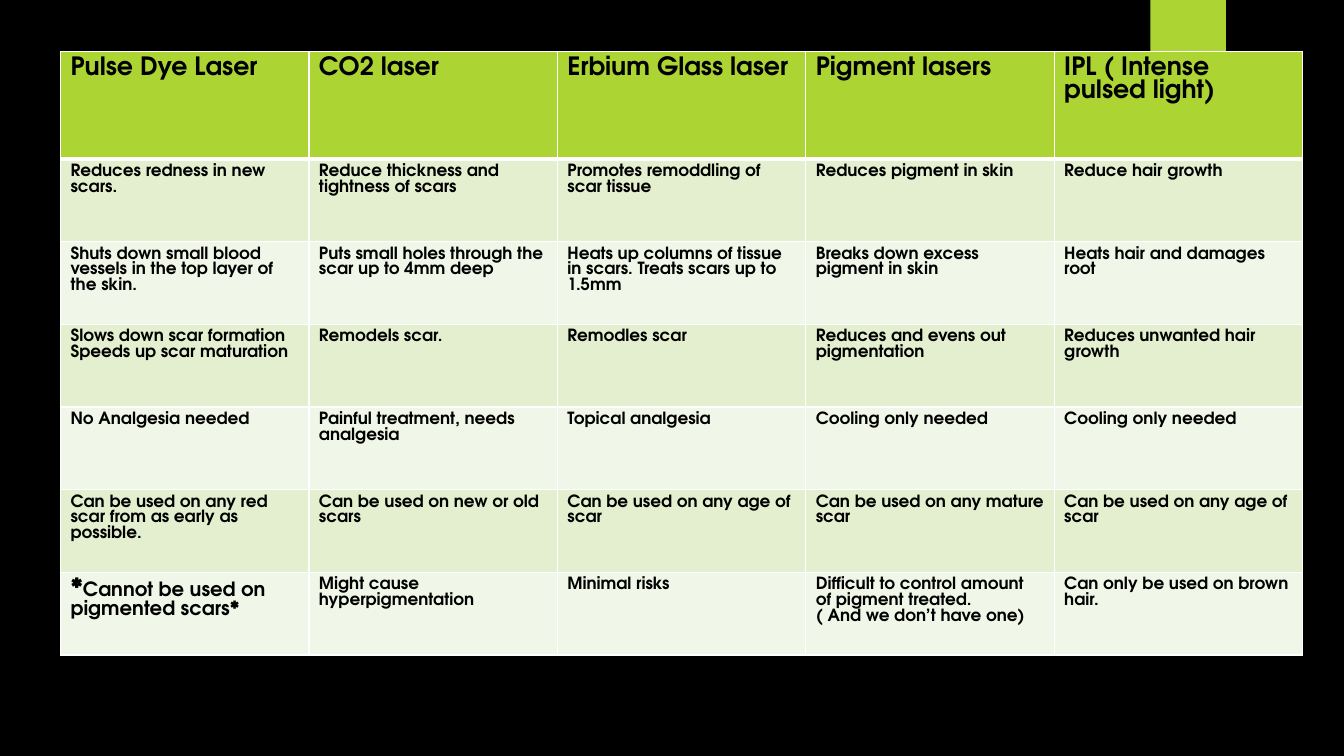
from lxml.etree import SubElement
from pptx import Presentation
from pptx.dml.color import RGBColor
from pptx.enum.shapes import MSO_SHAPE
from pptx.oxml.ns import qn
from pptx.util import Inches, Pt

BLACK = RGBColor(0x00, 0x00, 0x00)
WHITE = RGBColor(0xFF, 0xFF, 0xFF)
LIME = RGBColor(0xAC, 0xD4, 0x33)
BAND_DARK = RGBColor(0xE3, 0xEF, 0xCE)
BAND_LIGHT = RGBColor(0xF1, 0xF7, 0xE8)
FONT = "TeX Gyre Adventor"

LASERS = [
    ["Pulse Dye Laser", "CO2 laser", "Erbium Glass laser", "Pigment lasers",
     "IPL ( Intense pulsed light)"],
    ["Reduces redness in new scars.", "Reduce thickness and tightness of scars",
     "Promotes remoddling of scar tissue", "Reduces pigment in skin",
     "Reduce hair growth"],
    ["Shuts down small blood vessels in the top layer of the skin.",
     "Puts small holes through the scar up to 4mm deep",
     "Heats up columns of tissue in scars. Treats scars up to 1.5mm",
     "Breaks down excess pigment in skin", "Heats hair and damages root"],
    ["Slows down scar formation\nSpeeds up scar maturation", "Remodels scar.",
     "Remodles scar", "Reduces and evens out pigmentation",
     "Reduces unwanted hair growth"],
    ["No Analgesia needed", "Painful treatment, needs analgesia",
     "Topical analgesia", "Cooling only needed", "Cooling only needed"],
    ["Can be used on any red scar from as early as possible.",
     "Can be used on new or old scars", "Can be used on any age of scar",
     "Can be used on any mature scar", "Can be used on any age of scar"],
    ["*", "Might cause hyperpigmentation", "Minimal risks",
     "Difficult to control amount of pigment treated.\n( And we don’t have one)",
     "Can only be used on brown hair."],
]


def add_borders(cell, widths):
    properties = cell._tc.get_or_add_tcPr()
    for position, (side, width) in enumerate(widths.items()):
        line = properties.makeelement(qn(f"a:{side}"), {"w": str(Pt(width))})
        fill = SubElement(line, qn("a:solidFill"))
        SubElement(fill, qn("a:srgbClr"), val=str(WHITE))
        properties.insert(position, line)


presentation = Presentation()
presentation.slide_width = Inches(13.33)
presentation.slide_height = Inches(7.5)
slide = presentation.slides.add_slide(presentation.slide_layouts[6])
slide.background.fill.solid()
slide.background.fill.fore_color.rgb = BLACK

tab = slide.shapes.add_shape(
    MSO_SHAPE.RECTANGLE, Inches(11.41), Inches(0), Inches(0.75), Inches(1.25))
tab.shadow.inherit = False
tab.fill.solid()
tab.fill.fore_color.rgb = LIME
tab.line.fill.background()

table = slide.shapes.add_table(
    len(LASERS), len(LASERS[0]),
    Inches(0.6), Inches(0.51), Inches(12.32), Inches(6)).table
for column in table.columns:
    column.width = Inches(12.32 / 5)

for row_index, texts in enumerate(LASERS):
    is_header = row_index == 0
    table.rows[row_index].height = Inches(1.07 if is_header else 0.82)
    band = BAND_DARK if row_index % 2 else BAND_LIGHT
    for column_index, text in enumerate(texts):
        cell = table.cell(row_index, column_index)
        cell.text = text
        cell.fill.solid()
        cell.fill.fore_color.rgb = LIME if is_header else band
        add_borders(cell, {"lnL": 1, "lnR": 1,
                           "lnT": 3 if row_index == 1 else 1,
                           "lnB": 3 if is_header else 1})
        for paragraph in cell.text_frame.paragraphs:
            paragraph.font.name = FONT
            paragraph.font.size = Pt(18 if is_header else 12)
            paragraph.font.bold = True
            paragraph.font.color.rgb = BLACK

warning = table.cell(len(LASERS) - 1, 0).text_frame.paragraphs[0]
warning.font.size = Pt(14)
warning.runs[0].font.size = Pt(18)
warning.add_run().text = "Cannot be used on pigmented scars*"

presentation.save("out.pptx")
